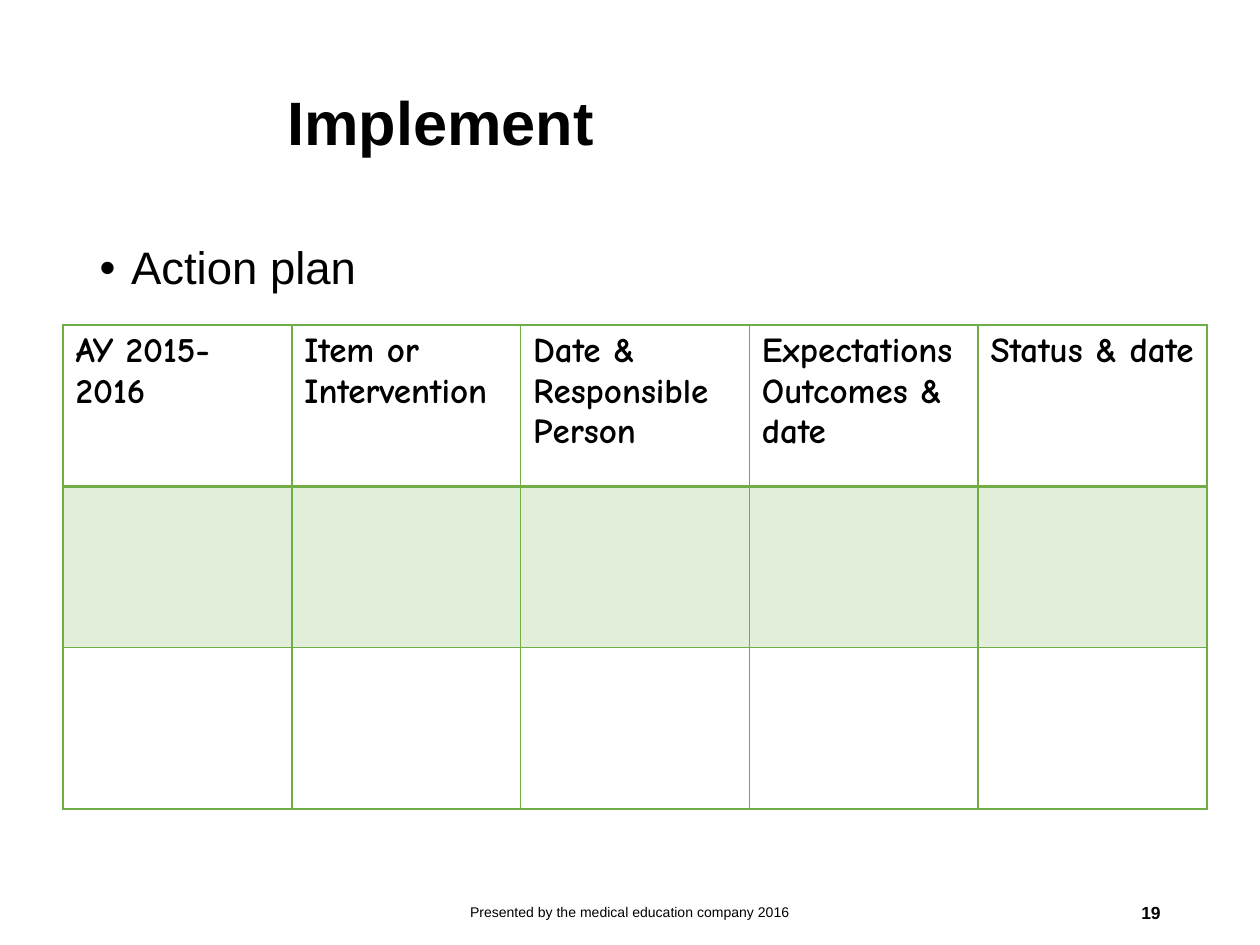
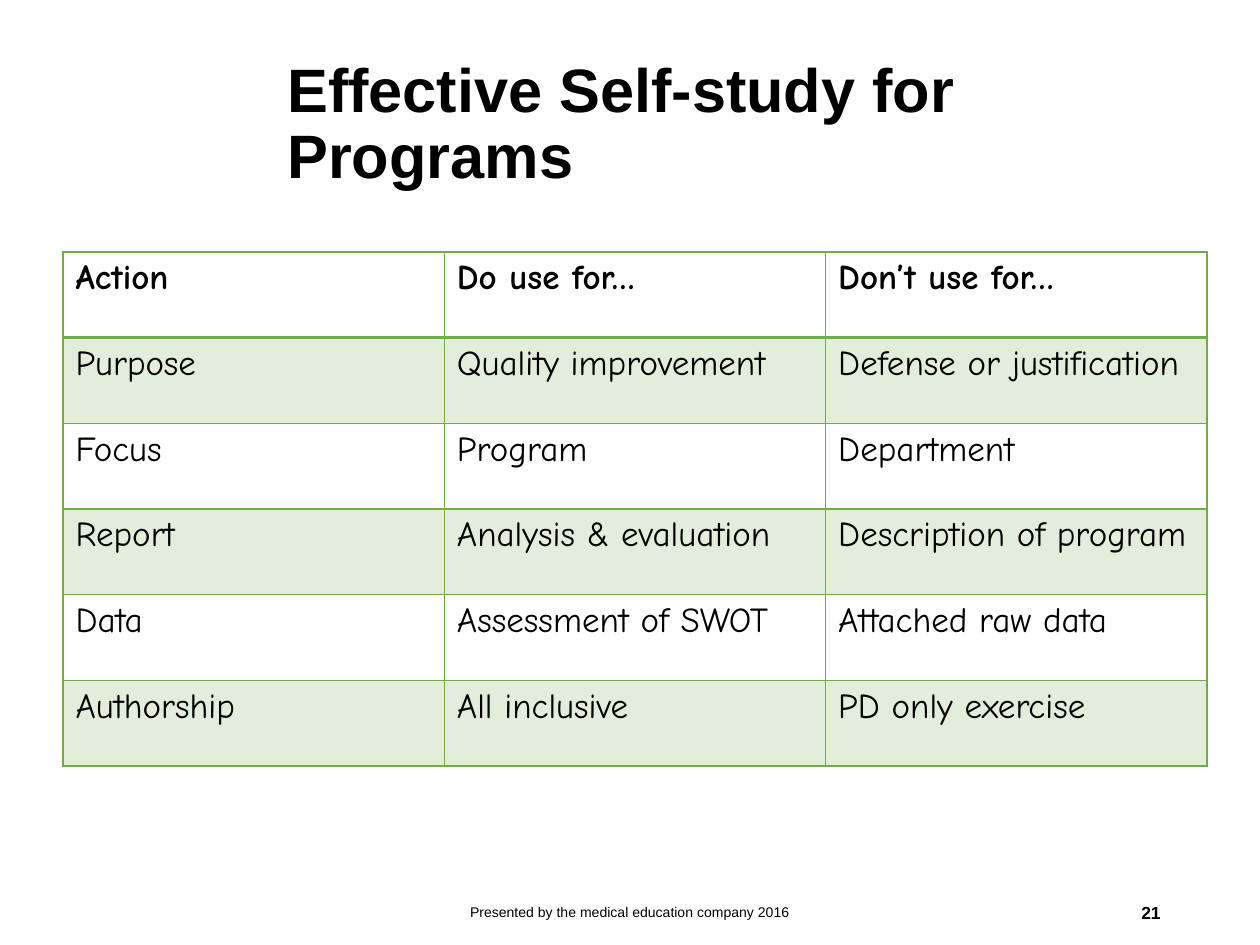
from lxml.etree import SubElement
from pptx import Presentation
from pptx.dml.color import RGBColor
from pptx.enum.text import MSO_ANCHOR, MSO_AUTO_SIZE, PP_ALIGN
from pptx.oxml.ns import qn
from pptx.util import Inches, Pt

# Content
FOOTER = "Presented by the medical education company 2016"
SLIDES = [
    {
        "title": "Implement",
        "number": "19",
        "bullets": ["Action plan"],
        "table_top": 2.58,
        "row_height": 1.28,
        "rows": [
            ["AY 2015-2016", "Item or Intervention", "Date &\nResponsible Person",
             "Expectations\nOutcomes & date", "Status & date"],
            [""] * 5,
            [""] * 5,
        ],
    },
    {
        "title": "Effective Self-study for Programs",
        "number": "21",
        "bullets": [],
        "table_top": 2,
        "row_height": 0.68,
        "rows": [
            ["Action", "Do use for…", "Don’t use for…"],
            ["Purpose", "Quality improvement", "Defense or justification"],
            ["Focus", "Program", "Department"],
            ["Report", "Analysis & evaluation", "Description of program"],
            ["Data", "Assessment of SWOT", "Attached raw data"],
            ["Authorship", "All inclusive", "PD only exercise"],
        ],
    },
]

# Shared style
COLORS = {"text": "000000", "green": "70AD47"}
HEADING_FONT, TABLE_FONT = "Arial", "Comic Neue"
TITLE_BOX = (2.18, 0.27, 7.14, 1.45)
BODY_BOX = (0.69, 1.9, 8.62, 4.85)
FOOTER_BOX = (3.31, 7.04, 3.38, 0.4)
NUMBER_BOX = (7.06, 7.04, 2.25, 0.4)
TABLE_LEFT, TABLE_WIDTH = 0.5, 9.08
BAND_OPACITY = 20
TITLE_AND_CONTENT, TITLE_ONLY = 1, 5


def style_text(frame, font, size, bold=False, align=PP_ALIGN.LEFT):
    for paragraph in frame.paragraphs:
        paragraph.alignment = align
        for run in paragraph.runs:
            run.font.name = font
            run.font.size = Pt(size)
            run.font.bold = bold
            run.font.color.rgb = RGBColor.from_string(COLORS["text"])


def place(shape, box):
    shape.left, shape.top, shape.width, shape.height = map(Inches, box)


def fill_title(title, text):
    place(title, TITLE_BOX)
    frame = title.text_frame
    frame.text = text
    frame.auto_size = MSO_AUTO_SIZE.NONE
    frame.vertical_anchor = MSO_ANCHOR.MIDDLE
    frame.paragraphs[0].line_spacing = 0.9
    style_text(frame, HEADING_FONT, 35, bold=True)


def fill_bullets(body, bullets):
    place(body, BODY_BOX)
    frame = body.text_frame
    frame.text = "\n".join(bullets)
    frame.auto_size = MSO_AUTO_SIZE.NONE
    for index, paragraph in enumerate(frame.paragraphs):
        properties = paragraph._p.get_or_add_pPr()
        properties.set("marL", str(Inches(0.25)))
        properties.set("indent", str(Inches(-0.25)))
        SubElement(properties, qn("a:buFont"), typeface=HEADING_FONT)
        SubElement(properties, qn("a:buChar"), char="•")
        paragraph.line_spacing = 0.9
        paragraph.space_before = Pt(10 if index else 0)
    style_text(frame, HEADING_FONT, 26)


def add_label(slide, box, text, size, bold, align):
    frame = slide.shapes.add_textbox(*map(Inches, box)).text_frame
    frame.word_wrap = True
    frame.vertical_anchor = MSO_ANCHOR.MIDDLE
    frame.text = text
    style_text(frame, HEADING_FONT, size, bold, align)


def set_borders(cell, row_index):
    # The rule between the header and the first row is twice as thick
    widths = {"L": 1, "R": 1,
              "T": 2 if row_index == 1 else 1,
              "B": 2 if row_index == 0 else 1}
    properties = cell._tc.get_or_add_tcPr()
    for side, width in widths.items():
        line = SubElement(properties, qn(f"a:ln{side}"), w=str(Pt(width)))
        solid = SubElement(line, qn("a:solidFill"))
        SubElement(solid, qn("a:srgbClr"), val=COLORS["green"])


def set_band(cell, banded):
    if not banded:
        cell.fill.background()
        return
    cell.fill.solid()
    cell.fill.fore_color.rgb = RGBColor.from_string(COLORS["green"])
    color = cell._tc.tcPr.find(f"{qn('a:solidFill')}/{qn('a:srgbClr')}")
    SubElement(color, qn("a:alpha"), val=str(BAND_OPACITY * 1000))


def add_grid(slide, rows, top, row_height):
    column_count = len(rows[0])
    table = slide.shapes.add_table(
        len(rows), column_count, Inches(TABLE_LEFT), Inches(top),
        Inches(TABLE_WIDTH), Inches(row_height * len(rows))).table
    table.first_row = table.horz_banding = False
    for column in table.columns:
        column.width = Inches(TABLE_WIDTH / column_count)
    for row_index, texts in enumerate(rows):
        table.rows[row_index].height = Inches(row_height)
        for column_index, text in enumerate(texts):
            cell = table.cell(row_index, column_index)
            cell.text_frame.text = text
            style_text(cell.text_frame, TABLE_FONT, 20, bold=row_index == 0)
            set_borders(cell, row_index)
            set_band(cell, banded=row_index % 2 == 1)


def build_slide(deck, content):
    layout = TITLE_AND_CONTENT if content["bullets"] else TITLE_ONLY
    slide = deck.slides.add_slide(deck.slide_layouts[layout])
    fill_title(slide.shapes.title, content["title"])
    if content["bullets"]:
        fill_bullets(slide.placeholders[1], content["bullets"])
    add_grid(slide, content["rows"], content["table_top"], content["row_height"])
    add_label(slide, FOOTER_BOX, FOOTER, 8, False, PP_ALIGN.CENTER)
    add_label(slide, NUMBER_BOX, content["number"], 10, True, PP_ALIGN.RIGHT)


def main():
    deck = Presentation()
    deck.slide_width, deck.slide_height = Inches(10), Inches(7.5)
    for content in SLIDES:
        build_slide(deck, content)
    deck.save("out.pptx")


if __name__ == "__main__":
    main()
